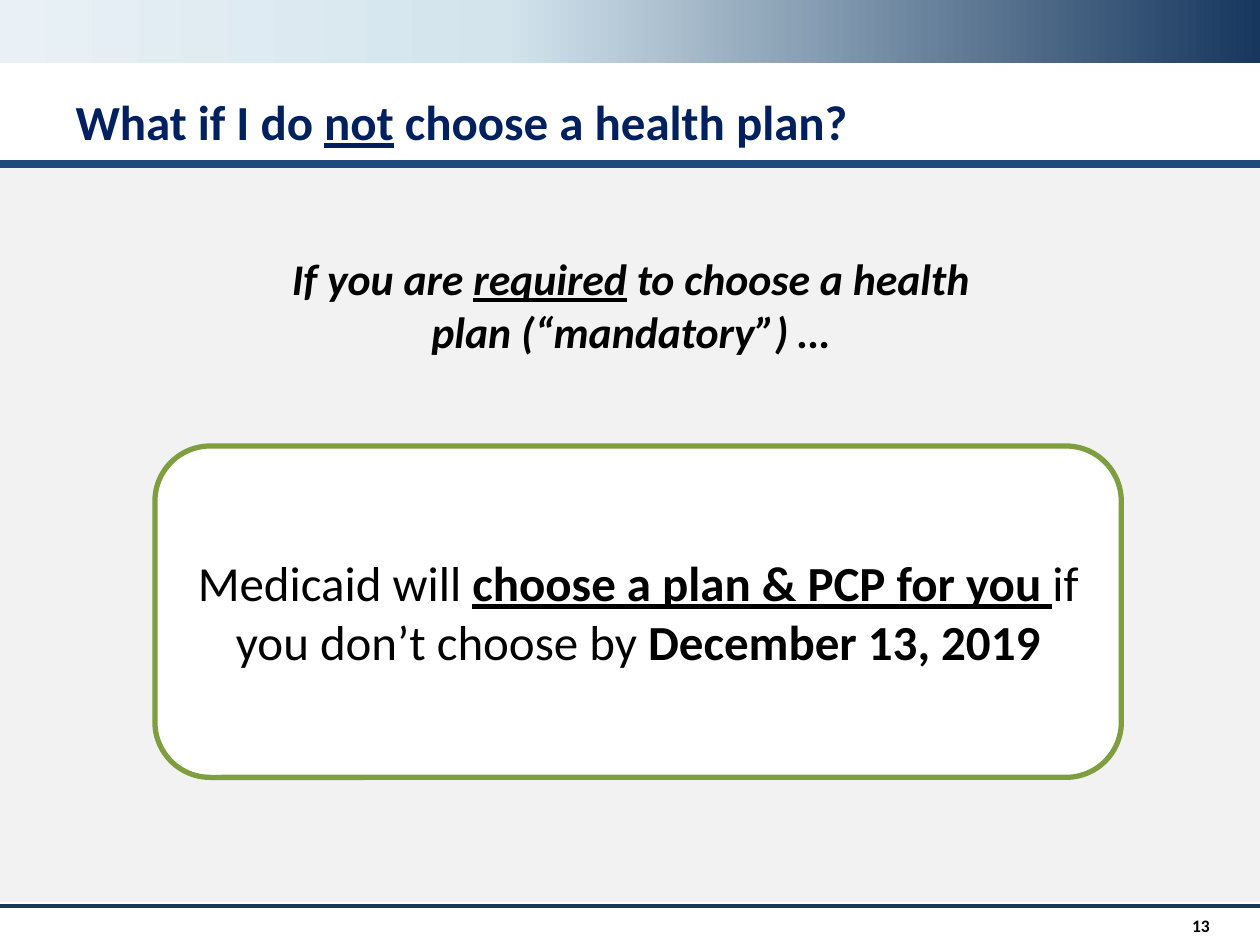
from copy import deepcopy
from lxml.etree import SubElement
from pptx import Presentation
from pptx.dml.color import RGBColor as Rgb
from pptx.enum.shapes import MSO_CONNECTOR as Link, MSO_SHAPE as Form
from pptx.enum.text import MSO_ANCHOR as Anchor, MSO_AUTO_SIZE as Fit, PP_ALIGN as Align
from pptx.oxml.ns import qn
from pptx.util import Inches, Pt

NAVY = Rgb(0x00, 0x20, 0x60)
DEEP = Rgb(0x17, 0x37, 0x5E)
BLUE = Rgb(0x1F, 0x49, 0x7D)
SKY = Rgb(0xD3, 0xE4, 0xED)
PALE = Rgb(0xE9, 0xF1, 0xF6)
GREY = Rgb(0xF2, 0xF2, 0xF2)
GREEN = Rgb(0x7F, 0x9E, 0x3F)
WHITE = Rgb(0xFF, 0xFF, 0xFF)
BLACK = Rgb(0x00, 0x00, 0x00)

TITLE = [("What if I do ", "b"), ("not", "bu"), (" choose a health plan?", "b")]
LEAD = [("If you are ", "bi"), ("required", "biu"),
        (" to choose a health plan (“mandatory”) …", "bi")]
RULE = [("Medicaid will ", ""), ("choose a plan & PCP for you ", "bu"),
        ("if you don’t choose by ", ""), ("December 13, 2019", "b")]
PAGE = [("13", "b")]
STOPS = [(0, DEEP), (0.6, SKY), (1, PALE)]
LINES = [(1.29, NAVY, 2), (7.19, DEEP, 2.25), (1.3, BLUE, 4.5)]

prs = Presentation()
prs.slide_width, prs.slide_height = Inches(10), Inches(7.5)
slide = prs.slides.add_slide(prs.slide_layouts[5])
shapes = slide.shapes


def write(shape, runs, size, color=BLACK, align=Align.CENTER, anchor=Anchor.TOP):
    frame = shape.text_frame
    frame.word_wrap = True
    frame.auto_size = Fit.NONE
    frame.vertical_anchor = anchor
    para = frame.paragraphs[0]
    para.alignment = align
    for text, marks in runs:
        run = para.add_run()
        run.text = text
        font = run.font
        font.name, font.size = "Calibri", Pt(size)
        font.color.rgb = color
        font.bold, font.italic, font.underline = (m in marks for m in "biu")
    return para


def block(form, *box):
    shape = shapes.add_shape(form, *map(Inches, box))
    shape.shadow.inherit = False
    shape.line.fill.background()
    return shape


def paint(shape, color):
    shape.fill.solid()
    shape.fill.fore_color.rgb = color


def rule(y, color, width):
    line = shapes.add_connector(Link.STRAIGHT, 0, Inches(y), Inches(10), Inches(y))
    line.line.color.rgb = color
    line.line.width = Pt(width)
    SubElement(line._element.spPr, qn("a:effectLst"))


def label(runs, size, box, **look):
    return write(shapes.add_textbox(*map(Inches, box)), runs, size, **look)


band = block(Form.RECTANGLE, 0, 0, 10, 0.5)
band.fill.gradient()
band.fill.gradient_angle = 180
stops = band.fill.gradient_stops
first = stops[0]._gs
first.addnext(deepcopy(first))
for stop, (place, color) in zip(band.fill.gradient_stops, STOPS):
    stop.position = place
    stop.color.rgb = color

paint(block(Form.RECTANGLE, 0, 1.3, 10, 5.86), GREY)
for line in LINES:
    rule(*line)

title = shapes.title
title.left, title.top, title.width, title.height = map(Inches, (0.5, 0.73, 9, 0.6))
write(title, TITLE, 28, NAVY, Align.LEFT).line_spacing = 0.9

label(PAGE, 10, (9.08, 7.19, 0.62, 0.31), align=Align.RIGHT, anchor=Anchor.MIDDLE)
label(LEAD, 25, (1.94, 1.95, 6.13, 0.94))

card = block(Form.ROUNDED_RECTANGLE, 1.23, 3.54, 7.67, 2.63)
paint(card, WHITE)
card.line.color.rgb = GREEN
card.line.width = Pt(3)
write(card, RULE, 28, anchor=Anchor.MIDDLE).space_after = Pt(18)

prs.save("out.pptx")
